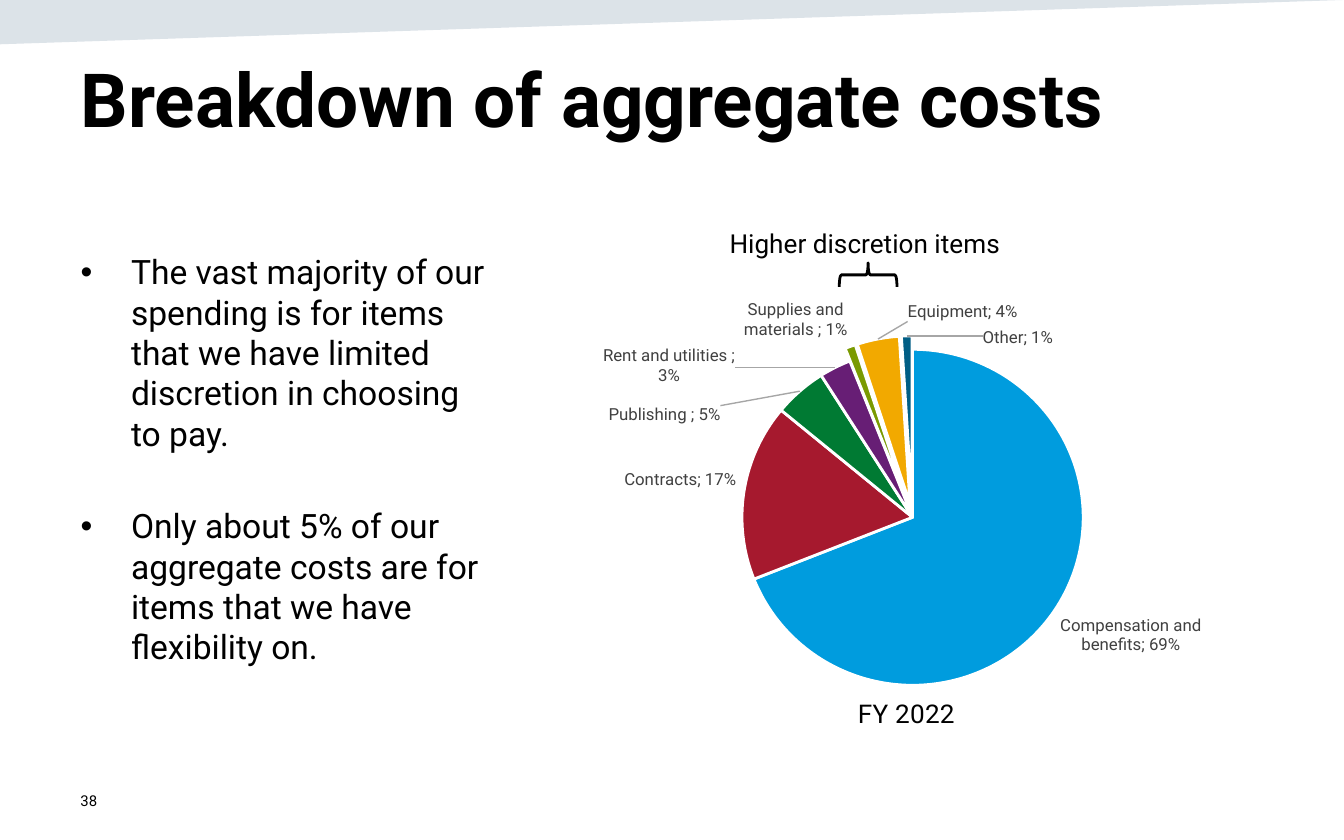
from dataclasses import dataclass

from lxml.etree import SubElement
from pptx import Presentation
from pptx.chart.data import CategoryChartData
from pptx.dml.color import RGBColor
from pptx.enum.chart import XL_CHART_TYPE as Kind, XL_LABEL_POSITION as Spot
from pptx.enum.shapes import MSO_SHAPE as Form
from pptx.enum.text import MSO_ANCHOR as Anchor, MSO_AUTO_SIZE as Fit, PP_ALIGN as Align
from pptx.oxml import parse_xml
from pptx.oxml.ns import nsdecls, qn
from pptx.util import Inches, Pt

FONT = "Roboto"
BLACK = RGBColor(0, 0, 0)
WHITE = RGBColor(0xFF, 0xFF, 0xFF)
GREY = RGBColor(0x40, 0x40, 0x40)
NAVY = RGBColor(0x16, 0x44, 0x69)
WIDE, HIGH = Inches(10), Inches(6.25)
COL, ROW = WIDE / 100, HIGH / 62.5  # grid of 100 columns and 62.5 rows


@dataclass(frozen=True)
class Box:
    """A place on the grid, in columns and rows."""
    col: float
    row: float
    cols: float
    rows: float

    def emu(self) -> tuple:
        return (round(self.col * COL), round(self.row * ROW),
                round(self.cols * COL), round(self.rows * ROW))


@dataclass(frozen=True)
class Slice:
    name: str
    share: float
    tint: RGBColor
    burst: int = 0  # percent of the radius
    shift: tuple | None = None  # label offset, as shares of the chart


SLICES = [
    Slice("Compensation and benefits", 0.69, RGBColor(0x00, 0x9C, 0xDE)),
    Slice("Contracts", 0.17, RGBColor(0xA6, 0x19, 0x2E)),
    Slice("Publishing ", 0.05, RGBColor(0x00, 0x7A, 0x33), shift=(-0.1, 0.08)),
    Slice("Rent and utilities ", 0.03, RGBColor(0x67, 0x1E, 0x75), shift=(-0.13, 0.05)),
    Slice("Supplies and materials ", 0.01, RGBColor(0x7A, 0x9A, 0x01), 8),
    Slice("Equipment", 0.04, RGBColor(0xF2, 0xA9, 0x00), 8, (0.19, -0.02)),
    Slice("Other", 0.01, RGBColor(0x00, 0x5E, 0x85), 8, (0.15, 0.04)),
]
POINTS = [
    "The vast majority of our spending is for items that we have limited "
    "discretion in choosing to pay.",
    "Only about 5% of our aggregate costs are for items that we have flexibility on.",
]


def style(font, size: float, tint=BLACK, bold=False) -> None:
    font.name, font.size, font.bold = FONT, Pt(size), bold
    font.color.rgb = tint


def write(shape, *lines: str, size: float, bold=False, gap=0, anchor=Anchor.TOP) -> None:
    frame = shape.text_frame
    frame.word_wrap, frame.auto_size = True, Fit.NONE
    frame.vertical_anchor = anchor
    for num, line in enumerate(lines):
        para = frame.add_paragraph() if num else frame.paragraphs[0]
        para.alignment = Align.LEFT
        para.space_before = Pt(gap if num else 0)
        run = para.add_run()
        run.text = line
        style(run.font, size, bold=bold)


def move(shape, box: Box):
    shape.left, shape.top, shape.width, shape.height = box.emu()
    return shape


def layout(x: float, y: float, size: tuple = ()):
    """Manual chart layout; a size makes it an inner plot area."""
    tags = [("layoutTarget", "inner")] if size else []
    if size or y > 0.5:
        tags += [("xMode", "edge"), ("yMode", "edge")]
    tags += [("x", x), ("y", y), *zip("wh", size)]
    body = "".join(f'<c:{tag} val="{val}"/>' for tag, val in tags)
    return parse_xml(f'<c:layout {nsdecls("c")}><c:manualLayout>{body}'
                     "</c:manualLayout></c:layout>")


def place(node, spot: int, new) -> None:
    """Put a layout into a chart node in place of any old one."""
    for old in node.findall(qn("c:layout")):
        node.remove(old)
    node.insert(spot, new)


def draw_pie(slide, box: Box) -> None:
    data = CategoryChartData(number_format="0%")
    data.categories = [part.name for part in SLICES]
    data.add_series("Series 1", [part.share for part in SLICES])
    chart = slide.shapes.add_chart(Kind.PIE, *box.emu(), data).chart
    style(chart.font, 10)
    chart.has_legend = False
    chart.has_title = True
    head = chart.chart_title
    head.text_frame.text = "FY 2022"
    style(head.text_frame.paragraphs[0].runs[0].font, 14)
    head.include_in_layout = False
    place(head._element, 1, layout(0.44, 0.92))
    plot = chart.plots[0]
    plot.vary_by_categories = True
    place(plot._element.getparent(), 0, layout(0.29, 0.23, (0.46, 0.68)))

    series = plot.series[0]
    labels = series.data_labels
    labels.show_value = labels.show_category_name = True
    labels.show_percentage = False
    labels.number_format, labels.number_format_is_linked = "0%", False
    labels.position = Spot.OUTSIDE_END
    style(labels.font, 9, GREY)
    root = labels._element
    for old in root.findall(qn("c:showLeaderLines")):
        root.remove(old)
    SubElement(root, qn("c:showLeaderLines")).set("val", "1")
    root.append(parse_xml(
        f'<c:leaderLines {nsdecls("c", "a")}><c:spPr><a:ln w="9525"><a:solidFill>'
        '<a:srgbClr val="A6A6A6"/></a:solidFill></a:ln></c:spPr></c:leaderLines>'))

    for num, part in enumerate(SLICES):
        point = series.points[num]
        point.format.fill.solid()
        point.format.fill.fore_color.rgb = part.tint
        point.format.line.color.rgb = WHITE
        point.format.line.width = Pt(1.5)
        if part.burst:
            look = series._element.xpath(f"c:dPt[c:idx/@val={num}]/c:spPr")[0]
            look.addprevious(parse_xml(
                f'<c:explosion {nsdecls("c")} val="{part.burst}"/>'))
        if part.shift:
            style(point.data_label.font, 9, GREY)
            point.data_label.position = Spot.OUTSIDE_END
            label = root.xpath(f"c:dLbl[c:idx/@val={num}]")[0]
            label.find(qn("c:showCatName")).set("val", "1")
            place(label, 1, layout(*part.shift))


def draw_band(slide) -> None:
    edge = slide.shapes.build_freeform(0, 0)
    edge.add_line_segments([(0, round(3.3 * ROW)), (WIDE, 0)], close=True)
    band = edge.convert_to_shape()
    band.shadow.inherit = False
    band.line.fill.background()
    band.fill.solid()
    band.fill.fore_color.rgb = NAVY
    tint = band._element.spPr.find(qn("a:solidFill"))[0]
    SubElement(tint, qn("a:alpha")).set("val", "15000")


def draw_brace(slide, box: Box) -> None:
    brace = slide.shapes.add_shape(Form.RIGHT_BRACE, *box.emu())
    brace.rotation = 270
    brace.shadow.inherit = False
    brace.fill.background()
    brace.line.color.rgb = BLACK
    brace.line.width = Pt(1.5)


def main() -> None:
    deck = Presentation()
    deck.slide_width, deck.slide_height = WIDE, HIGH
    slide = deck.slides.add_slide(deck.slide_layouts[1])
    title, body = slide.placeholders
    draw_band(slide)
    write(move(title, Box(5, 3.4, 90, 10.4)), "Breakdown of aggregate costs",
          size=40, bold=True)
    write(move(body, Box(5, 18.2, 32.9, 35.3)), *POINTS, size=18, gap=28)
    draw_pie(slide, Box(39.2, 17.5, 55.2, 37.4))
    draw_brace(slide, Box(63.7, 18.3, 1.8, 4.3))
    add = slide.shapes.add_textbox
    write(add(*Box(53.3, 16.4, 22.6, 3.4).emu()), "Higher discretion items", size=14)
    write(add(*Box(5, 57.9, 22.5, 3.3).emu()), "38", size=8, anchor=Anchor.MIDDLE)
    deck.save("out.pptx")


if __name__ == "__main__":
    main()
